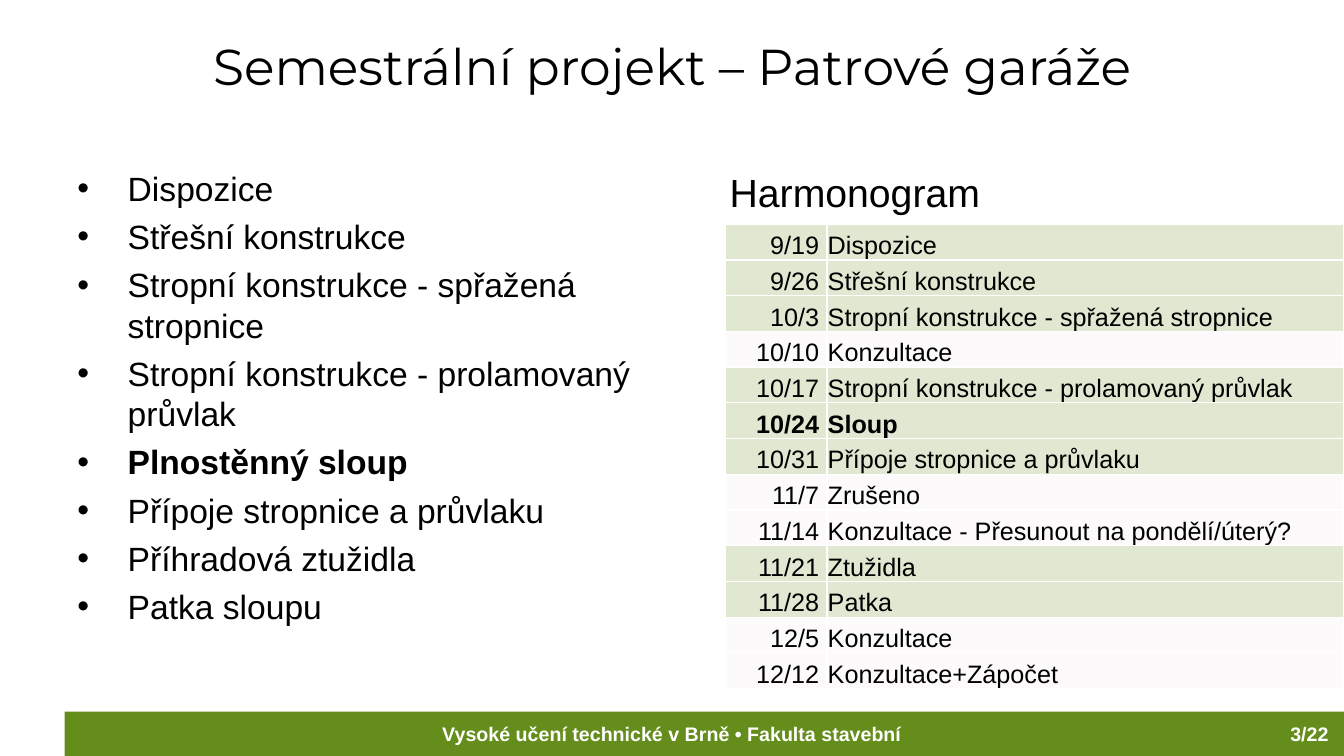
from lxml import etree
from pptx import Presentation
from pptx import util as u
from pptx.dml.color import RGBColor
from pptx.enum import shapes, text
from pptx.oxml import ns

Cm, Pt = u.Cm, u.Pt
HUES = {"green": "658D1B", "pale": "F4E7E7", "white": "FFFFFF", "black": "000000"}
LEFT, MID, RIGHT = text.PP_ALIGN.LEFT, text.PP_ALIGN.CENTER, text.PP_ALIGN.RIGHT

deck = Presentation()
deck.slide_width, deck.slide_height = Cm(33.87), Cm(19.05)
slide = deck.slides.add_slide(deck.slide_layouts[6])


def style(para, size, hue="black", bold=False, align=LEFT, face="Arial"):
    para.alignment = align
    for run in para.runs:
        font = run.font
        font.name, font.size, font.bold = face, Pt(size), bold
        font.color.rgb = RGBColor.from_string(HUES[hue])


def add_text(box, words, *look):
    frame = slide.shapes.add_textbox(*[Cm(n) for n in box]).text_frame
    frame.word_wrap = True
    frame.text = words
    for para in frame.paragraphs:
        style(para, *look)
    return frame


# Footer
bar = slide.shapes.add_shape(shapes.MSO_SHAPE.RECTANGLE, Cm(1.63), Cm(17.93), Cm(32.24), Cm(1.12))
bar.shadow.inherit = False
bar.fill.solid()
bar.fill.fore_color.rgb = RGBColor.from_string(HUES["green"])
bar.line.fill.background()
add_text((0, 18.06, 33.87, 0.86), "Vysoké učení technické v Brně • Fakulta stavební", 14, "white", True, MID)
add_text((30.4, 18.06, 3.33, 0.86), "3/22", 14, "white", True, RIGHT)

# Title
add_text((1.7, 0.76, 30.48, 2.77), "Semestrální projekt – Patrové garáže", 36, "black", False, MID, "Montserrat")

# Topic list
topics = [
    "Dispozice",
    "Střešní konstrukce",
    "Stropní konstrukce - spřažená stropnice",
    "Stropní konstrukce - prolamovaný průvlak",
    "Plnostěnný sloup",
    "Přípoje stropnice a průvlaku",
    "Příhradová ztužidla",
    "Patka sloupu",
]
body = add_text((1.7, 4.11, 15.04, 12.9), "\n".join(topics), 24)
for i, para in enumerate(body.paragraphs):
    props = para._p.get_or_add_pPr()
    props.set("marL", str(Cm(1.27)))
    props.set("indent", str(-Cm(1.27)))
    etree.SubElement(props, ns.qn("a:buFont")).set("typeface", "Arial")
    etree.SubElement(props, ns.qn("a:buChar")).set("char", "•")
    if i:
        para.space_before = Pt(5.6)
    para.runs[0].font.bold = para.text == "Plnostěnný sloup"

# Schedule
add_text((18.14, 4.11, 15.04, 12.9), "Harmonogram", 28)
plan = [
    ("9/19", "Dispozice"),
    ("9/26", "Střešní konstrukce"),
    ("10/3", "Stropní konstrukce - spřažená stropnice"),
    ("10/10", "Konzultace"),
    ("10/17", "Stropní konstrukce - prolamovaný průvlak"),
    ("10/24", "Sloup"),
    ("10/31", "Přípoje stropnice a průvlaku"),
    ("11/7", "Zrušeno"),
    ("11/14", "Konzultace - Přesunout na pondělí/úterý?"),
    ("11/21", "Ztužidla"),
    ("11/28", "Patka"),
    ("12/5", "Konzultace"),
    ("12/12", "Konzultace+Zápočet"),
]
grid = slide.shapes.add_table(len(plan), 2, Cm(18.27), Cm(5.65), Cm(15.6), Cm(11.7)).table
grid.columns[0].width, grid.columns[1].width = Cm(2.57), Cm(13.03)
for r, (day, topic) in enumerate(plan):
    grid.rows[r].height = Cm(0.9)
    hue = "pale" if topic.startswith(("Konzultace", "Zrušeno")) else "green"
    for c, (words, align) in enumerate([(day + " ", RIGHT), (topic, LEFT)]):
        cell = grid.cell(r, c)
        cell.text = words
        style(cell.text_frame.paragraphs[0], 18, "black", topic == "Sloup", align)
        cell.vertical_anchor = text.MSO_ANCHOR.BOTTOM
        cell.margin_left = cell.margin_right = cell.margin_top = Cm(0.02)
        cell.margin_bottom = 0
        cell.fill.solid()
        cell.fill.fore_color.rgb = RGBColor.from_string(HUES[hue])
        # Fill opacity and white borders
        props = cell._tc.get_or_add_tcPr()
        tint = props.find(".//" + ns.qn("a:srgbClr"))
        etree.SubElement(tint, ns.qn("a:alpha")).set("val", "20000")
        for i, side in enumerate(["lnL", "lnR", "lnT", "lnB"]):
            edge = etree.Element(ns.qn("a:" + side), w=str(Pt(1)))
            paint = etree.SubElement(edge, ns.qn("a:solidFill"))
            etree.SubElement(paint, ns.qn("a:srgbClr")).set("val", HUES["white"])
            props.insert(i, edge)

deck.save("out.pptx")
